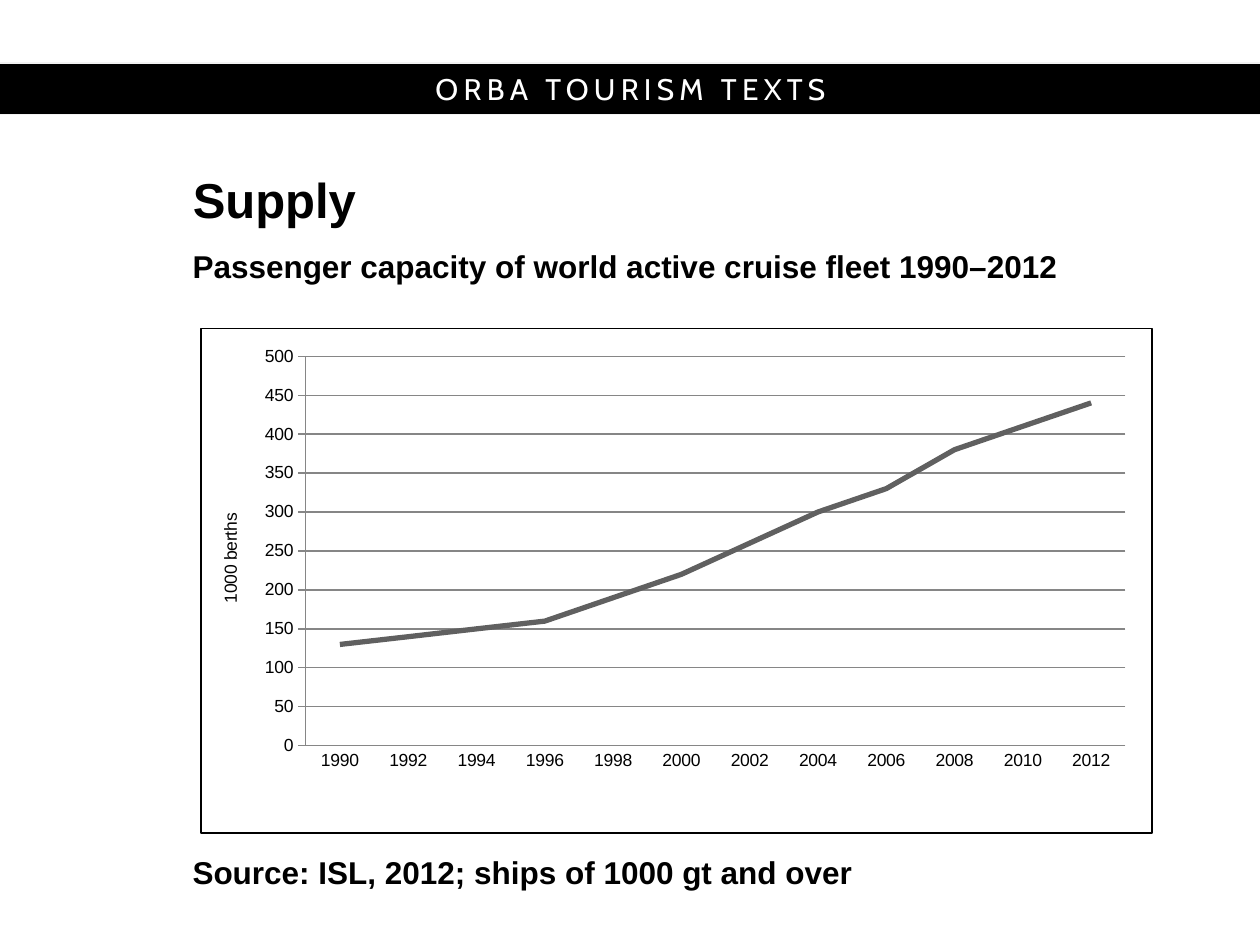
"""Build the cruise supply slide with its fleet capacity line chart."""
from lxml import etree
from pptx import Presentation
from pptx.chart.data import CategoryChartData
from pptx.dml.color import RGBColor
from pptx.enum.chart import XL_CHART_TYPE as ChartType, XL_MARKER_STYLE as MarkerStyle
from pptx.enum.chart import XL_TICK_MARK as TickMark
from pptx.enum.shapes import MSO_SHAPE as ShapeType
from pptx.enum.text import MSO_ANCHOR as Anchor, PP_ALIGN as Align
from pptx.oxml import parse_xml
from pptx.oxml.ns import nsdecls, qn
from pptx.util import Inches, Pt

BLACK = RGBColor(0x00, 0x00, 0x00)
WHITE = RGBColor(0xFF, 0xFF, 0xFF)
PALE_GRAY = RGBColor(0xF2, 0xF2, 0xF2)
AXIS_GRAY = RGBColor(0x86, 0x86, 0x86)
SERIES_GRAY = RGBColor(0x60, 0x60, 0x60)
TEXT_LEFT, TEXT_WIDTH = Inches(1.43), Inches(7.87)


def style_font(font, size, color=BLACK, bold=False, name="Arial"):
    font.name = name
    font.size = Pt(size)
    font.bold = bold
    font.color.rgb = color


presentation = Presentation()
presentation.slide_width, presentation.slide_height = Inches(10), Inches(7.5)
slide = presentation.slides.add_slide(presentation.slide_layouts[5])

banner = slide.shapes.add_shape(
    ShapeType.RECTANGLE, Inches(-0.08), Inches(0.5), Inches(10.17), Inches(0.41))
banner.shadow.inherit = False
banner.fill.solid()
banner.fill.fore_color.rgb = BLACK
banner.line.color.rgb = PALE_GRAY
banner.line.width = Pt(0.75)
banner.text_frame.vertical_anchor = Anchor.MIDDLE
paragraph = banner.text_frame.paragraphs[0]
paragraph.alignment = Align.CENTER
run = paragraph.add_run()
run.text = "ORBA TOURISM TEXTS"
style_font(run.font, 17, WHITE, name="Cabin")
run.font._element.set("spc", "300")

title = slide.shapes.title
title.left, title.top, title.width, title.height = (
    TEXT_LEFT, Inches(1.35), TEXT_WIDTH, Inches(0.48))
title.text_frame.text = "Supply"
title.text_frame.vertical_anchor = Anchor.MIDDLE
paragraph = title.text_frame.paragraphs[0]
paragraph.alignment = Align.LEFT
paragraph.line_spacing = Pt(32)
style_font(paragraph.font, 28, bold=True)

for top, text in (
    (1.91, "Passenger capacity of world active cruise fleet 1990–2012"),
    (6.72, "Source: ISL, 2012; ships of 1000 gt and over"),
):
    caption = slide.shapes.add_textbox(TEXT_LEFT, Inches(top), TEXT_WIDTH, Inches(0.4))
    caption.text_frame.word_wrap = True
    paragraph = caption.text_frame.paragraphs[0]
    paragraph.text = text
    paragraph.space_after = Pt(3)
    style_font(paragraph.font, 18, bold=True)

chart_data = CategoryChartData()
chart_data.categories = [str(year) for year in range(1990, 2013, 2)]
chart_data.add_series(
    "Series 1", (130, 140, 150, 160, 190, 220, 260, 300, 330, 380, 410, 440))
chart = slide.shapes.add_chart(
    ChartType.LINE, Inches(1.59), Inches(2.6), Inches(7.56), Inches(4.02), chart_data).chart
chart.has_legend = False
chart.has_title = False
style_font(chart.font, 10)

plot = chart.plots[0]
plot.vary_by_categories = False
series = plot.series[0]
series.smooth = False
series.marker.style = MarkerStyle.NONE
series.format.line.color.rgb = SERIES_GRAY
series.format.line.width = Pt(3)

category_axis, value_axis = chart.category_axis, chart.value_axis
category_axis.major_tick_mark = TickMark.NONE
value_axis.major_tick_mark = TickMark.OUTSIDE
value_axis.minimum_scale, value_axis.maximum_scale = 0, 500
value_axis.major_unit = 50
value_axis.has_major_gridlines = True
for line in (category_axis.format.line, value_axis.format.line,
             value_axis.major_gridlines.format.line):
    line.color.rgb = AXIS_GRAY
    line.width = Pt(0.75)

title_frame = value_axis.axis_title.text_frame
title_frame.text = "1000 berths"
title_frame._txBody.find(qn("a:bodyPr")).set("rot", "-5400000")
style_font(title_frame.paragraphs[0].font, 10)

chart_element = chart._chartSpace.find(qn("c:chart"))
plot_area = chart_element.find(qn("c:plotArea"))
for old_layout in plot_area.findall(qn("c:layout")):
    plot_area.remove(old_layout)
layout = etree.Element(qn("c:layout"))
manual_layout = etree.SubElement(layout, qn("c:manualLayout"))
for tag, value in (
    ("layoutTarget", "inner"), ("xMode", "edge"), ("yMode", "edge"),
    ("x", "0.11"), ("y", "0.055"), ("w", "0.862"), ("h", "0.772"),
):
    etree.SubElement(manual_layout, qn(f"c:{tag}")).set("val", value)
plot_area.insert(0, layout)

chart_element.addnext(parse_xml(
    f'<c:spPr {nsdecls("c", "a")}><a:noFill/><a:ln w="12700"><a:solidFill>'
    f'<a:srgbClr val="{BLACK}"/></a:solidFill></a:ln></c:spPr>'))

presentation.save("out.pptx")
